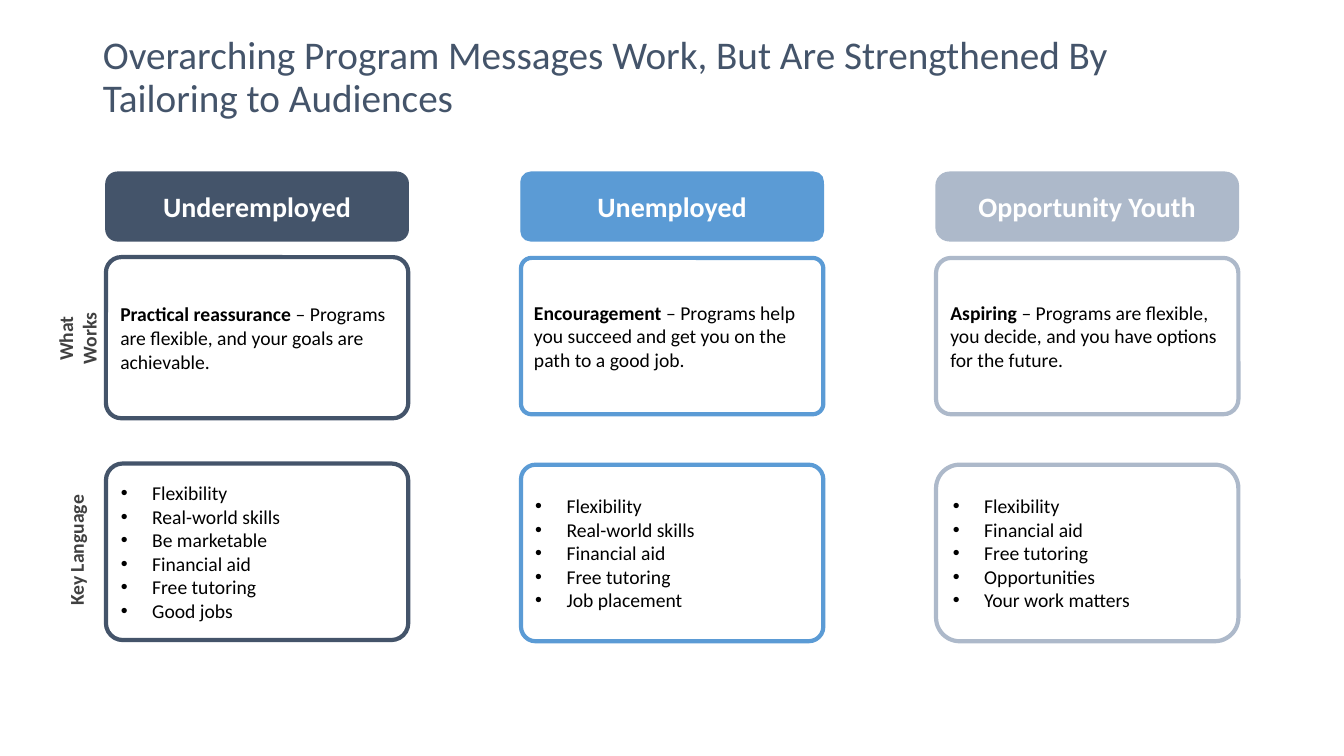
"""Build a slide that matches program messages to three audiences."""
from lxml import etree
from pptx import Presentation
from pptx.dml.color import RGBColor
from pptx.enum.shapes import MSO_SHAPE
from pptx.enum.text import MSO_ANCHOR, MSO_AUTO_SIZE, PP_ALIGN
from pptx.oxml.ns import qn
from pptx.util import Cm, Pt

ROUNDED = MSO_SHAPE.ROUNDED_RECTANGLE
MIDDLE = MSO_ANCHOR.MIDDLE
NO_AUTOFIT = MSO_AUTO_SIZE.NONE
LEFT, CENTER = PP_ALIGN.LEFT, PP_ALIGN.CENTER

NAVY = RGBColor(0x44, 0x54, 0x6A)
BLUE = RGBColor(0x5B, 0x9B, 0xD5)
PALE = RGBColor(0xAD, 0xB9, 0xCA)
GRAY = RGBColor(0x40, 0x40, 0x40)
BLACK = RGBColor(0, 0, 0)
WHITE = RGBColor(0xFF, 0xFF, 0xFF)

FONT = "Calibri"
TITLE = "Overarching Program Messages Work, But Are Strengthened By Tailoring to Audiences"
FIRST_LEFT, COLUMN_PITCH, COLUMN_WIDTH = 2.67, 10.46, 7.62
HEADER_TOP, HEADER_HEIGHT = 4.34, 1.73
LANGUAGE_HEIGHT = 4.45

AUDIENCES = [
    {
        "name": "Underemployed", "color": NAVY, "corners": (0.167, 0.095, 0.096),
        "message": ("Practical reassurance ",
                    "– Programs are flexible, and your goals are achievable."),
        "message_box": (6.48, 4.06), "language_top": 11.68,
        "language": ["Flexibility", "Real-world skills", "Be marketable",
                     "Financial aid", "Free tutoring", "Good jobs"],
    },
    {
        "name": "Unemployed", "color": BLUE, "corners": (0.14, 0.068, 0.083),
        "message": ("Encouragement ",
                    "– Programs help you succeed and get you on the path to a good job."),
        "message_box": (6.5, 3.94), "language_top": 11.71,
        "language": ["Flexibility", "Real-world skills", "Financial aid",
                     "Free tutoring", "Job placement"],
    },
    {
        "name": "Opportunity Youth", "color": PALE, "corners": (0.195, 0.096, 0.134),
        "message": ("Aspiring ",
                    "– Programs are flexible, you decide, and you have options for the future."),
        "message_box": (6.5, 3.94), "language_top": 11.71,
        "language": ["Flexibility", "Financial aid", "Free tutoring",
                     "Opportunities", "Your work matters"],
    },
]


def add_bullet(paragraph):
    """Give a paragraph a hanging round bullet."""
    properties = paragraph._p.get_or_add_pPr()
    properties.set("marL", str(Cm(0.79)))
    properties.set("indent", str(-Cm(0.79)))
    etree.SubElement(properties, qn("a:buFont")).set("typeface", "Arial")
    etree.SubElement(properties, qn("a:buChar")).set("char", "•")


def write_text(frame, paragraphs, size=14, color=BLACK, align=LEFT, bullet=False,
               space_before=None, line_spacing=None, wrap=True):
    """Fill a text frame with paragraphs, each a list of (text, bold) runs."""
    frame.word_wrap = wrap
    frame.auto_size = NO_AUTOFIT
    frame.vertical_anchor = MIDDLE
    for index, runs in enumerate(paragraphs):
        paragraph = frame.add_paragraph() if index else frame.paragraphs[0]
        paragraph.alignment = align
        paragraph.space_before = space_before
        paragraph.line_spacing = line_spacing
        if bullet:
            add_bullet(paragraph)
        for text, bold in runs:
            run = paragraph.add_run()
            run.text = text
            run.font.name = FONT
            run.font.size = Pt(size)
            run.font.bold = bold
            run.font.color.rgb = color


def add_title(slide):
    """Place and format the slide title."""
    title = slide.shapes.title
    title.left, title.top, title.width, title.height = Cm(2.34), Cm(1.02), Cm(29.21), Cm(1.9)
    write_text(title.text_frame, [[(TITLE, False)]], size=28, color=NAVY, line_spacing=0.9)


def add_card(shapes, left, top, height, color, corner, filled=False):
    """Add a rounded card, either filled or outlined, and return its text frame."""
    card = shapes.add_shape(ROUNDED, Cm(left), Cm(top), Cm(COLUMN_WIDTH), Cm(height))
    card.adjustments[0] = corner
    card.shadow.inherit = False
    card.line.color.rgb = color
    card.line.width = Pt(1 if filled else 3)
    if filled:
        card.fill.solid()
        card.fill.fore_color.rgb = color
    else:
        card.fill.background()
    return card.text_frame


def add_audience(slide, left, audience):
    """Add one grouped column with its header, message and key language."""
    shapes = slide.shapes.add_group_shape().shapes
    color = audience["color"]
    header_corner, message_corner, language_corner = audience["corners"]
    message_top, message_height = audience["message_box"]
    lead, rest = audience["message"]

    message = add_card(shapes, left, message_top, message_height, color, message_corner)
    write_text(message, [[(lead, True), (rest, False)]])
    header = add_card(shapes, left, HEADER_TOP, HEADER_HEIGHT, color, header_corner, filled=True)
    write_text(header, [[(audience["name"], True)]], size=20, color=WHITE, align=CENTER,
               space_before=Pt(6))
    language = add_card(shapes, left, audience["language_top"], LANGUAGE_HEIGHT, color,
                        language_corner)
    write_text(language, [[(phrase, False)] for phrase in audience["language"]], bullet=True)


def add_row_label(slide, text, left, top, width, wrap):
    """Add a row label that reads upwards."""
    label = slide.shapes.add_textbox(Cm(left), Cm(top), Cm(width), Cm(0.86))
    label.rotation = 270
    frame = label.text_frame
    if wrap:
        frame.margin_left = frame.margin_right = Cm(0.5)
    write_text(frame, [[(text, True)]], color=GRAY, align=CENTER, wrap=wrap)


def main():
    """Build and save the presentation."""
    presentation = Presentation()
    presentation.slide_width, presentation.slide_height = Cm(33.87), Cm(19.05)
    slide = presentation.slides.add_slide(presentation.slide_layouts[5])
    add_title(slide)
    add_row_label(slide, "What Works", 0.48, 8.1, 2.92, wrap=True)
    for index, audience in enumerate(AUDIENCES):
        add_audience(slide, FIRST_LEFT + index * COLUMN_PITCH, audience)
    add_row_label(slide, "Key Language", 0.25, 13.44, 3.33, wrap=False)
    presentation.save("out.pptx")


if __name__ == "__main__":
    main()
